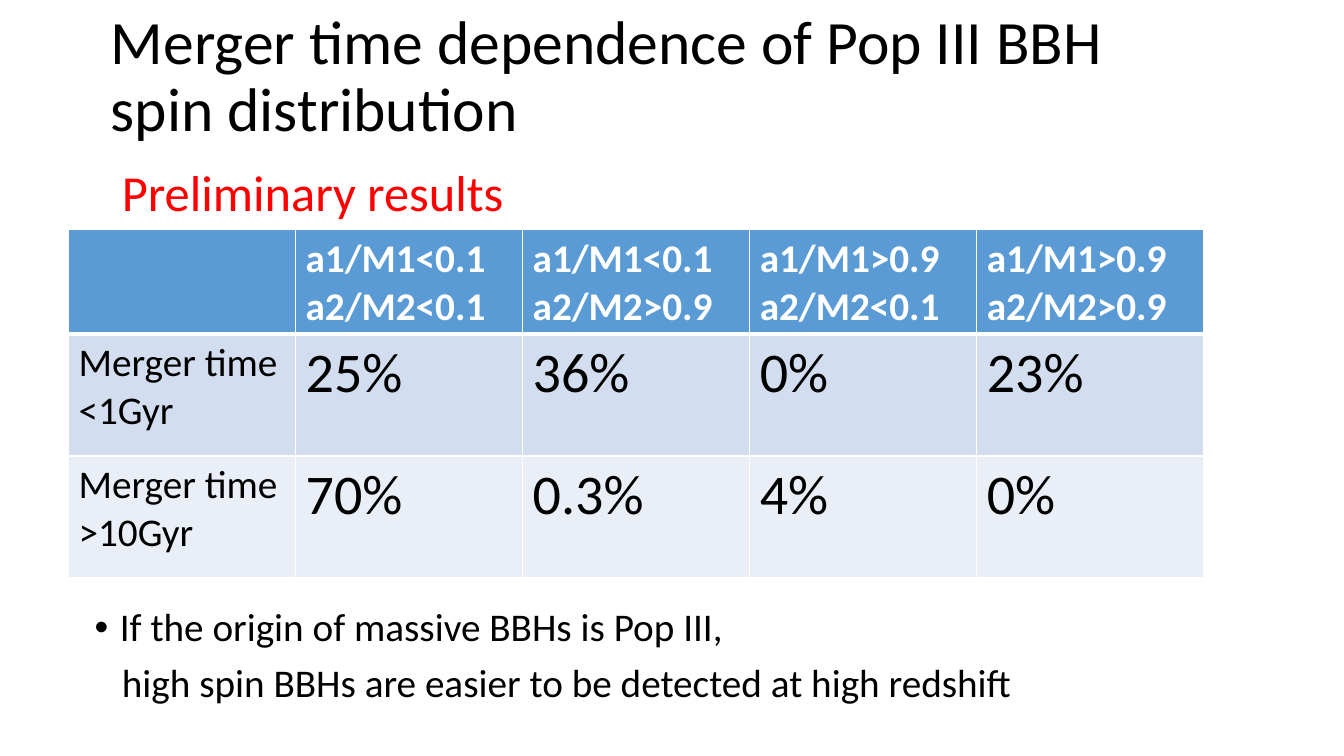
from lxml import etree
from pptx import Presentation
from pptx import util as u
from pptx.dml.color import RGBColor
from pptx.enum import text
from pptx.oxml.ns import qn

COLORS = {
    "ink": "000000", "alert": "FF0000", "white": "FFFFFF",
    "header": "5B9BD5", "odd": "D2DEEF", "even": "EAEFF7",
}
HEADERS = [
    ("",),
    ("a1/M1<0.1", "a2/M2<0.1"),
    ("a1/M1<0.1", "a2/M2>0.9"),
    ("a1/M1>0.9", "a2/M2<0.1"),
    ("a1/M1>0.9", "a2/M2>0.9"),
]
SHORT_MERGERS = [("Merger time", "<1Gyr"), ("25%",), ("36%",), ("0%",), ("23%",)]
LONG_MERGERS = [("Merger time", ">10Gyr"), ("70%",), ("0.3%",), ("4%",), ("0%",)]


def rgb(color):
    return RGBColor.from_string(COLORS[color])


def write_lines(frame, lines, size, color="ink", bold=False, **paragraph_format):
    for number, line in enumerate(lines):
        paragraph = frame.add_paragraph() if number else frame.paragraphs[0]
        for name, value in paragraph_format.items():
            setattr(paragraph, name, value)
        font_format = {"name": "Calibri", "size": u.Pt(size), "bold": bold}
        for name, value in font_format.items():
            setattr(paragraph.font, name, value)
        paragraph.font.color.rgb = rgb(color)
        paragraph.add_run().text = line


def add_frame(slide, box, anchor=text.MSO_ANCHOR.TOP):
    frame = slide.shapes.add_textbox(*map(u.Inches, box)).text_frame
    frame.word_wrap = True
    frame.vertical_anchor = anchor
    return frame


def add_title(slide, box):
    frame = add_frame(slide, box, text.MSO_ANCHOR.MIDDLE)
    write_lines(frame, ["Merger time dependence of Pop III BBH spin distribution"],
                44, line_spacing=0.9)


def add_status(slide, box):
    write_lines(add_frame(slide, box), ["Preliminary results"], 36, "alert")


def add_conclusion(slide, box):
    frame = add_frame(slide, box)
    lines = ["If the origin of massive BBHs is Pop III,",
             "high spin BBHs are easier to be detected at high redshift"]
    write_lines(frame, lines, 28, line_spacing=0.9)
    claim, consequence = frame.paragraphs
    consequence.space_before = u.Pt(10)
    claim_props = claim._p.get_or_add_pPr()
    claim_props.set("marL", str(u.Inches(0.25)))
    claim_props.set("indent", str(u.Inches(-0.25)))
    bullet_font = etree.Element(qn("a:buFont"), typeface="Arial")
    bullet = etree.Element(qn("a:buChar"), char="•")
    font_props = claim_props.find(qn("a:defRPr"))
    font_props.addprevious(bullet_font)
    font_props.addprevious(bullet)
    consequence._p.get_or_add_pPr().set("marL", str(u.Inches(0.27)))


def set_borders(cell, widths):
    props = cell._tc.get_or_add_tcPr()
    for position, (side, width) in enumerate(widths.items()):
        line = etree.Element(qn(f"a:ln{side}"), w=str(u.Pt(width)))
        fill = etree.SubElement(line, qn("a:solidFill"))
        etree.SubElement(fill, qn("a:srgbClr"), val=COLORS["white"])
        props.insert(position, line)


def add_spin_table(slide, box):
    rows = [(HEADERS, "header", 0.93), (SHORT_MERGERS, "odd", 1.21),
            (LONG_MERGERS, "even", 1.21)]
    table = slide.shapes.add_table(len(rows), len(HEADERS), *map(u.Inches, box)).table
    for column in table.columns:
        column.width = u.Inches(box[2] / len(HEADERS))
    for r, (entries, fill, height) in enumerate(rows):
        table.rows[r].height = u.Inches(height)
        is_header = r == 0
        for c, lines in enumerate(entries):
            cell = table.cell(r, c)
            cell.fill.solid()
            cell.fill.fore_color.rgb = rgb(fill)
            set_borders(cell, {"L": 1, "R": 1, "T": 3 if r == 1 else 1,
                               "B": 3 if is_header else 1})
            write_lines(cell.text_frame, lines, 28 if is_header or c == 0 else 40,
                        "white" if is_header else "ink", is_header)


def main():
    deck = Presentation()
    deck.slide_width, deck.slide_height = u.Inches(13.33), u.Inches(7.5)
    slide = deck.slides.add_slide(deck.slide_layouts[6])
    add_title(slide, (1, 0.05, 11.1, 1.45))
    add_conclusion(slide, (0.84, 5.98, 12.49, 1.52))
    add_spin_table(slide, (0.68, 2.28, 11.26, 3.35))
    add_status(slide, (1.11, 1.55, 5.92, 0.71))
    deck.save("out.pptx")


if __name__ == "__main__":
    main()
